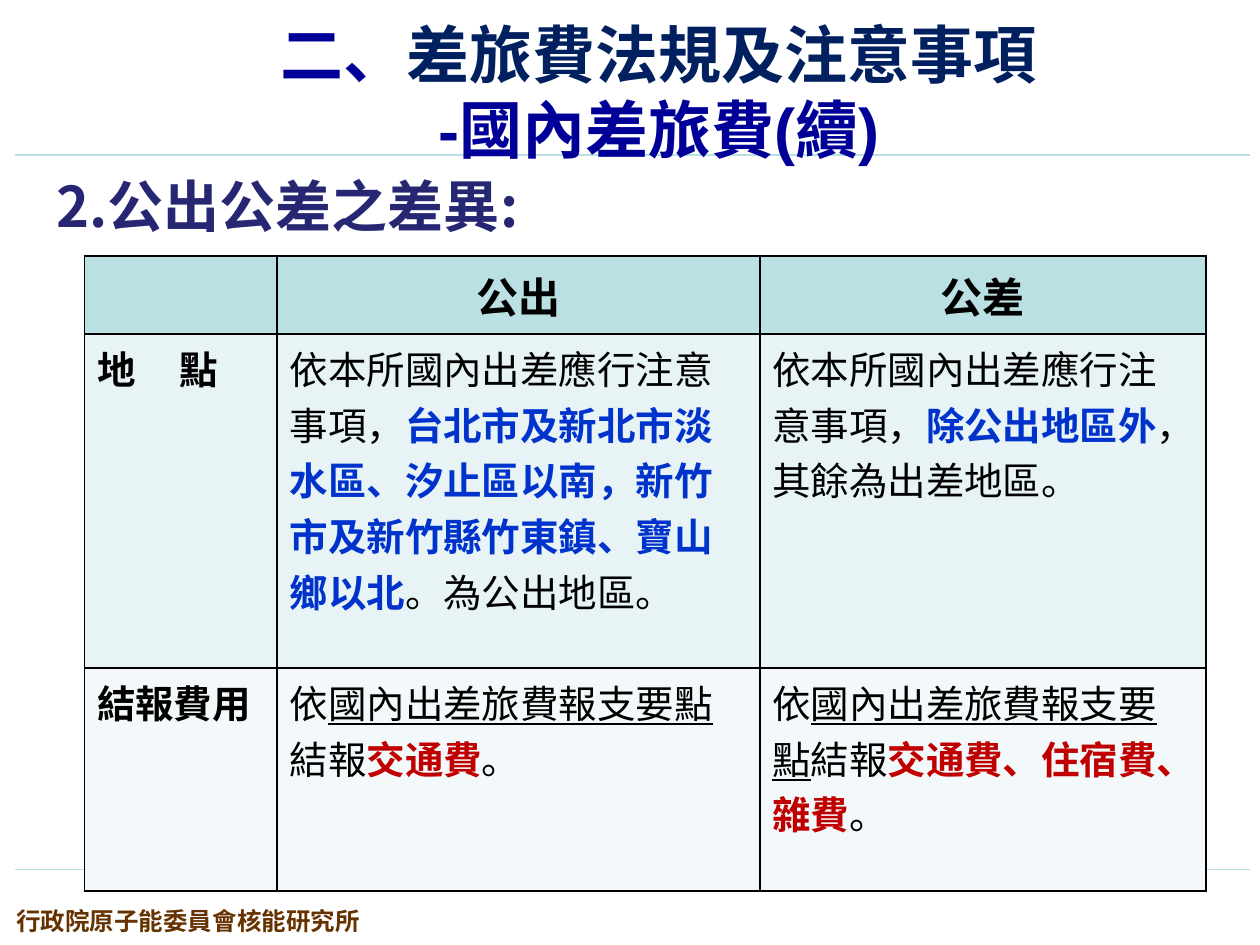
from lxml import etree
from pptx import Presentation
from pptx import util as u
from pptx.dml.color import RGBColor
from pptx.enum import shapes, text
from pptx.oxml import ns

Pt = u.Pt
NOTO, ARIAL, TIMES = "Noto Sans CJK SC", "Arial", "Times New Roman"
BLACK = RGBColor(0x00, 0x00, 0x00)
NAVY = RGBColor(0x00, 0x00, 0x99)
DEEP_BLUE = RGBColor(0x00, 0x20, 0x60)
INDIGO = RGBColor(0x26, 0x26, 0x73)
BLUE = RGBColor(0x00, 0x33, 0xCC)
RED = RGBColor(0xC0, 0x00, 0x00)
BROWN = RGBColor(0x66, 0x33, 0x00)
TEAL = RGBColor(0xBB, 0xE0, 0xE3)
PALE = RGBColor(0xE7, 0xF3, 0xF4)
PALEST = RGBColor(0xF3, 0xF9, 0xFA)

HEAD = {"size": Pt(24), "bold": True}
LABEL = {"bold": True}
PLACE = {"bold": True, "color": BLUE}
COST = {"bold": True, "color": RED}
RULE = {"underline": True}

ROWS = [
    (TEAL, 44.6, [[], [("公出", HEAD)], [("公差", {**HEAD, "name": TIMES})]]),
    (PALE, 190.9, [
        [("地\t點", LABEL)],
        [("依本所國內出差應行注意事項，", {}),
         ("台北市及新北市淡水區、汐止區以南，新竹市及新竹縣竹東鎮、寶山鄉以北", PLACE),
         ("。為公出地區。", {})],
        [("依本所國內出差應行注意事項，", {}), ("除公出地區外", PLACE),
         ("，其餘為出差地區。", {})]]),
    (PALEST, 127.4, [
        [("結報費用", LABEL)],
        *[[("依", {}), ("國內出差旅費報支要點", RULE), ("結報", {}), (cost, COST), ("。", {})]
          for cost in ("交通費", "交通費、住宿費、雜費")]]),
]


def sub(parent, tag, **attrs):
    return etree.SubElement(parent, ns.qn(tag), attrs)


class Deck:
    base = {"name": NOTO, "size": Pt(22), "bold": False, "color": BLACK}

    def __init__(self, prs):
        self.s = prs.slides.add_slide(prs.slide_layouts[6])

    def line(self, y):
        c = self.s.shapes.add_connector(
            shapes.MSO_CONNECTOR.STRAIGHT, Pt(8.64), Pt(y), Pt(714.24), Pt(y))
        c.line.color.rgb, c.line.width = TEAL, Pt(1)
        sub(c._element.spPr, "a:effectLst")

    def run(self, p, words, style, shadow=False):
        r = p.add_run()
        r.text = words
        style = {**self.base, **style}
        r.font.color.rgb = style.pop("color")
        rpr = r.font._element
        if shadow:
            effects = sub(rpr, "a:effectLst")
            cast = sub(effects, "a:outerShdw", dist="25400", dir="2700000", algn="tl")
            sub(cast, "a:srgbClr", val=str(BLACK))
        for key, value in style.items():
            setattr(r.font, key, value)
        sub(rpr, "a:ea", typeface=NOTO)

    def box(self, x, y, w, h, lines, wrap=True, shadow=False, **format):
        """Add one paragraph; each item of lines is a list of (words, style)."""
        tf = self.s.shapes.add_textbox(Pt(x), Pt(y), Pt(w), Pt(h)).text_frame
        tf.word_wrap = wrap
        tf.vertical_anchor = text.MSO_ANCHOR.MIDDLE if shadow else text.MSO_ANCHOR.TOP
        p = tf.paragraphs[0]
        for key, value in format.items():
            setattr(p, key, value)
        for i, runs in enumerate(lines):
            if i:
                p.add_line_break()
            for words, style in runs:
                self.run(p, words, style, shadow)

    def border(self, cell):
        tcpr = cell._tc.get_or_add_tcPr()
        for tag in ("a:lnL", "a:lnR", "a:lnT", "a:lnB"):
            ln = sub(tcpr, tag, w=str(Pt(1)))
            sub(sub(ln, "a:solidFill"), "a:srgbClr", val=str(BLACK))

    def table(self, x, y, widths, rows):
        height = sum(h for _, h, _ in rows)
        tbl = self.s.shapes.add_table(
            len(rows), len(widths), Pt(x), Pt(y), Pt(sum(widths)), Pt(height)).table
        for col, w in zip(tbl.columns, widths):
            col.width = Pt(w)
        for i, (fill, h, cells) in enumerate(rows):
            tbl.rows[i].height = Pt(h)
            for j, runs in enumerate(cells):
                cell = tbl.cell(i, j)
                self.border(cell)
                cell.fill.solid()
                cell.fill.fore_color.rgb = fill
                p = cell.text_frame.paragraphs[0]
                if i == 0:
                    cell.vertical_anchor = text.MSO_ANCHOR.MIDDLE
                    p.alignment = text.PP_ALIGN.CENTER
                elif j == 0:
                    tabs = sub(p._p.get_or_add_pPr(), "a:tabLst")
                    sub(tabs, "a:tab", pos=str(Pt(47)), algn="l")
                for words, style in runs:
                    self.run(p, words, style)


def main():
    prs = Presentation()
    prs.slide_width, prs.slide_height = Pt(720), Pt(540)
    deck = Deck(prs)
    for y in (88.56, 496.8):
        deck.line(y)
    deck.box(2.16, 514, 212.4, 25.2, [[("行政院原子能委員會核能研究所", {
        "name": ARIAL, "size": Pt(14), "bold": True, "color": BROWN})]], wrap=False)
    deck.box(25.2, 94.3, 629.3, 51.1, [[("2.公出公差之差異:", {
        "size": Pt(32), "bold": True, "color": INDIGO})]])
    deck.table(48.24, 146.16, [110.16, 275.76, 254.88], ROWS)
    title = {"name": ARIAL, "size": Pt(36), "bold": True, "color": NAVY}
    deck.box(97.9, 15.1, 557.3, 73.4, [
        [("二、", title), ("差旅費法規及注意事項", {**title, "name": NOTO, "color": DEEP_BLUE})],
        [("-國內差旅費(續)", title)],
    ], shadow=True, alignment=text.PP_ALIGN.CENTER, line_spacing=Pt(43))
    prs.save("out.pptx")


if __name__ == "__main__":
    main()
